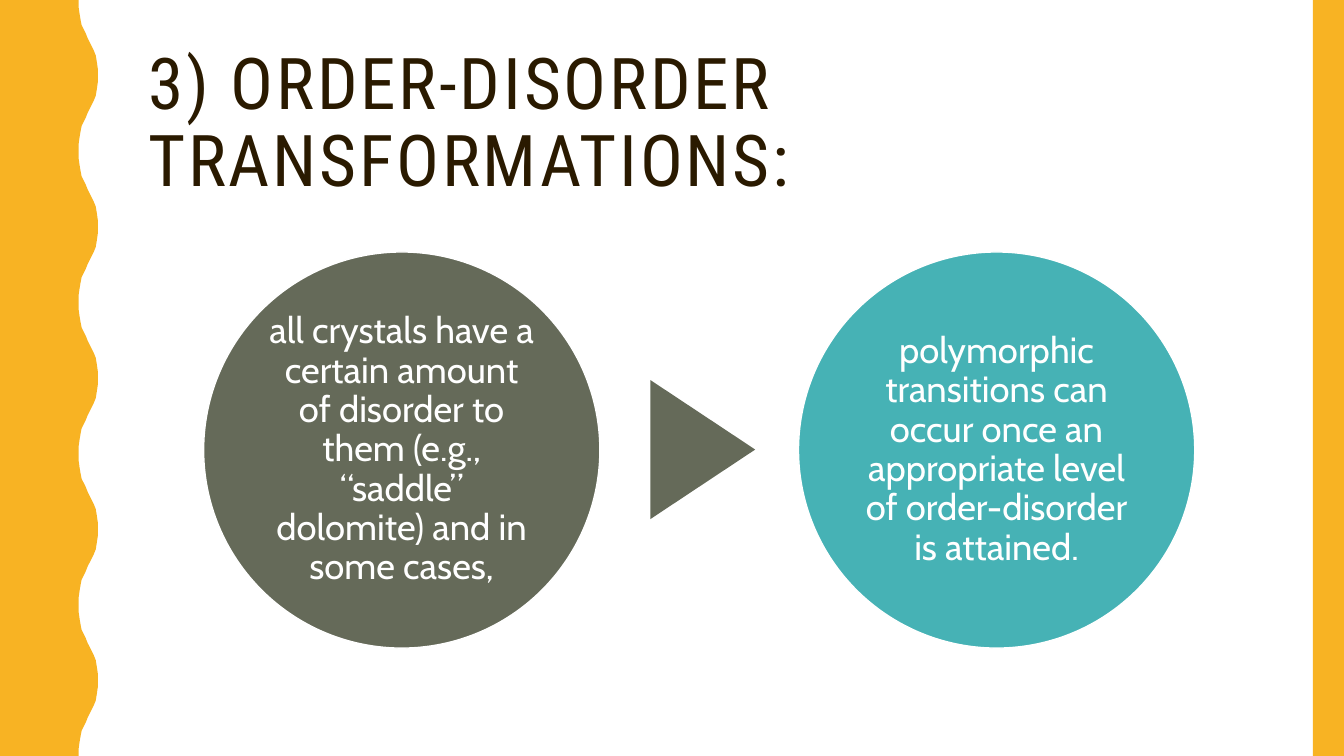
from pptx import Presentation
from pptx.dml.color import RGBColor
from pptx.enum.shapes import MSO_SHAPE as Shape
from pptx.enum.text import MSO_ANCHOR as Anchor, MSO_AUTO_SIZE as AutoSize, PP_ALIGN as Align
from pptx.util import Inches, Pt

WHITE = RGBColor(0xFF, 0xFF, 0xFF)
BROWN = RGBColor(0x2A, 0x1A, 0x00)
YELLOW = RGBColor(0xF8, 0xB3, 0x23)
OLIVE = RGBColor(0x65, 0x6A, 0x59)
TEAL = RGBColor(0x46, 0xB2, 0xB5)


def paint(shape, color):
    shape.shadow.inherit = False
    shape.fill.solid()
    shape.fill.fore_color.rgb = color
    shape.line.fill.background()


def write(shape, text, font_name, size, color, align):
    frame = shape.text_frame
    frame.word_wrap = True
    frame.auto_size = AutoSize.NONE
    frame.vertical_anchor = Anchor.MIDDLE
    paragraph = frame.paragraphs[0]
    paragraph.alignment = align
    paragraph.line_spacing = 0.9
    run = paragraph.add_run()
    run.text = text
    run.font.name = font_name
    run.font.size = Pt(size)
    run.font.color.rgb = color
    return run


presentation = Presentation()
presentation.slide_width = Inches(13.33)
presentation.slide_height = Inches(7.5)
slide = presentation.slides.add_slide(presentation.slide_layouts[5])

title = slide.shapes.title
title.left, title.top = Inches(1.37), Inches(0.42)
title.width, title.height = Inches(11.13), Inches(1.63)
title_run = write(title, "3) ORDER-DISORDER TRANSFORMATIONS:", "Roboto Condensed", 51, BROWN, Align.LEFT)
title_run.font._element.set("spc", "200")

wave_length = 1.5
wave_x = [0.78, 0.78, 0.79, 0.8, 0.81, 0.83, 0.85, 0.87, 0.89, 0.91, 0.93, 0.95, 0.96, 0.97, 0.97]
wave_y = [0, 0.07, 0.14, 0.2, 0.25, 0.29, 0.33, 0.38, 0.42, 0.46, 0.5, 0.55, 0.61, 0.68, 0.75]
crest = list(zip(wave_x, wave_y))
wave = crest + [(x, wave_length - y) for x, y in reversed(crest[:-1])]
edge = [(Inches(x), Inches(y + wave_length * index)) for index in range(5) for x, y in wave]
builder = slide.shapes.build_freeform(0, 0)
builder.add_line_segments(edge + [(0, Inches(7.5))], close=True)
paint(builder.convert_to_shape(), YELLOW)

right_bar = slide.shapes.add_shape(Shape.RECTANGLE, Inches(13.02), 0, Inches(0.31), Inches(7.5))
paint(right_bar, YELLOW)

arrow = slide.shapes.add_shape(Shape.ISOSCELES_TRIANGLE, Inches(6.28), Inches(3.94), Inches(1.38), Inches(1.04))
arrow.rotation = 90
paint(arrow, OLIVE)

circles = [
    (2.02, OLIVE, "all crystals have a certain amount of disorder to them (e.g., “saddle” dolomite) and in some cases,"),
    (7.92, TEAL, "polymorphic transitions can occur once an appropriate level of order-disorder is attained."),
]
for left, color, text in circles:
    circle = slide.shapes.add_shape(Shape.OVAL, Inches(left), Inches(2.5), Inches(3.93), Inches(3.93))
    paint(circle, color)
    circle.line.color.rgb = WHITE
    circle.line.width = Pt(1)
    frame = circle.text_frame
    frame.margin_left = frame.margin_right = frame.margin_top = frame.margin_bottom = Inches(0.04)
    write(circle, text, "Cabin", 26, WHITE, Align.CENTER)

presentation.save("out.pptx")
